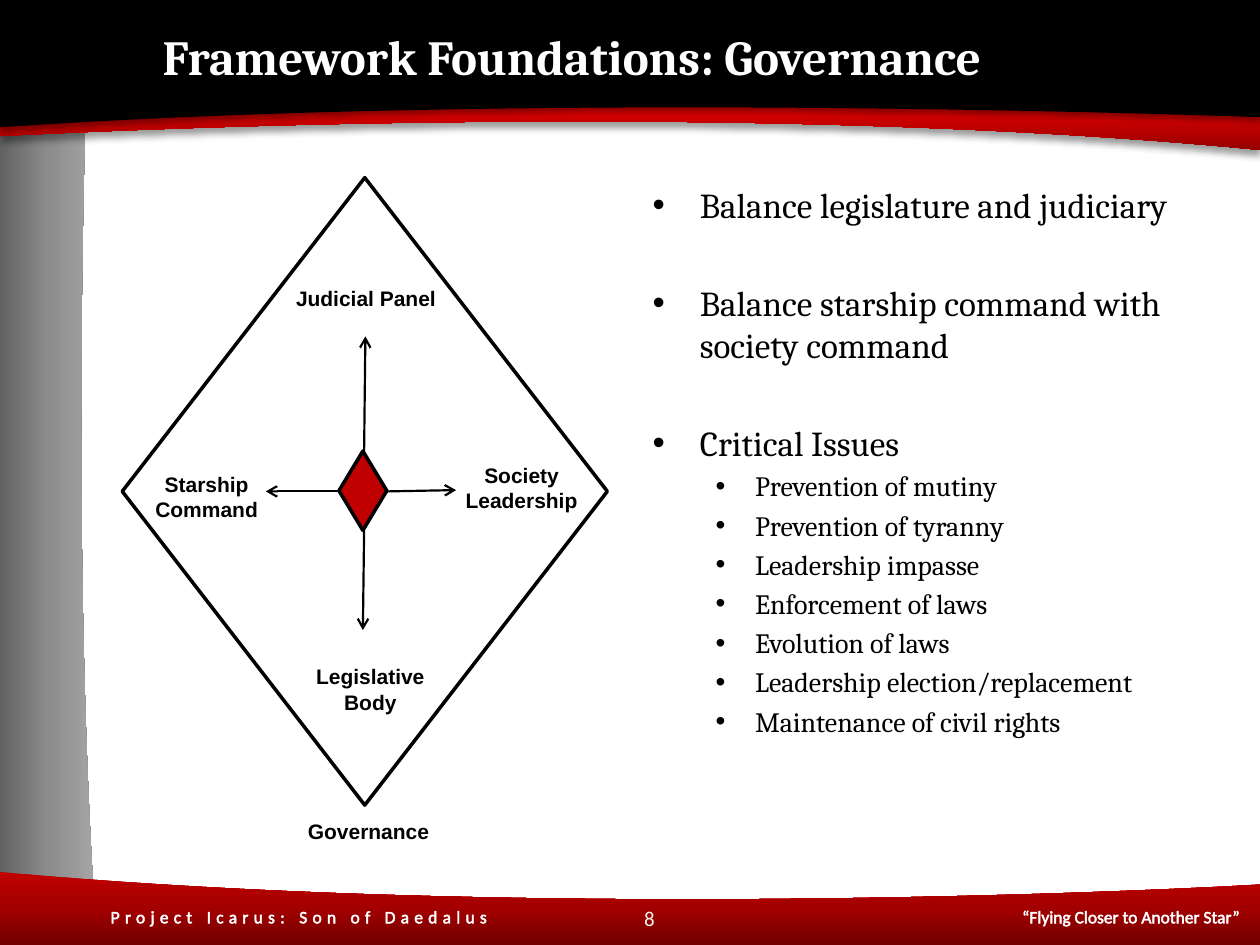
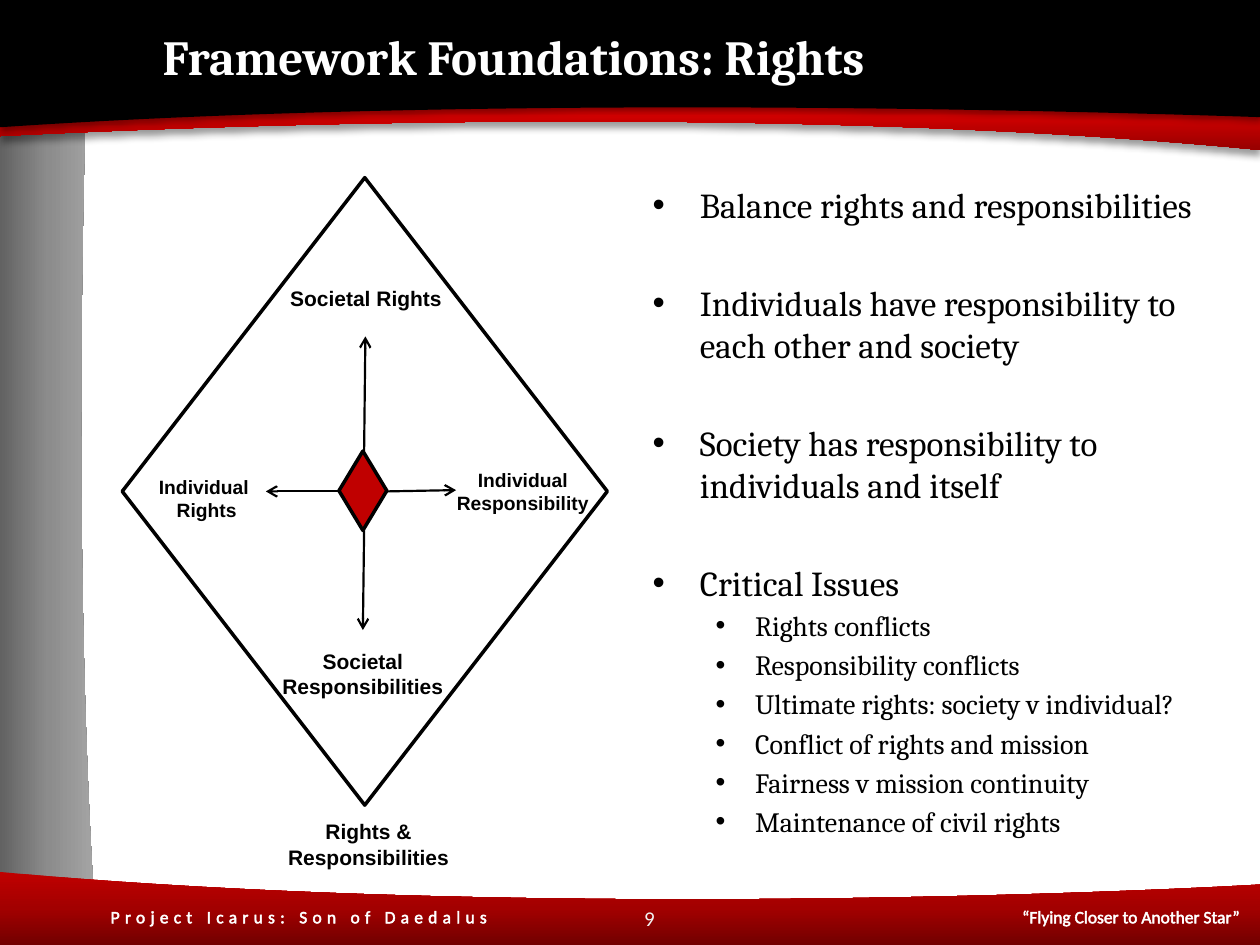
from copy import deepcopy

from lxml.etree import SubElement
from pptx import Presentation
from pptx.dml.color import RGBColor
from pptx.enum.shapes import MSO_CONNECTOR, MSO_SHAPE
from pptx.enum.text import MSO_ANCHOR, MSO_AUTO_SIZE, PP_ALIGN
from pptx.oxml.ns import qn
from pptx.util import Inches, Pt

BLACK, WHITE, PALE, RED = "000000", "FFFFFF", "F2F2F2", "C00000"
TITLE_FONT, LABEL_FONT, FOOTER_FONT = "Cambria", "Arial", "Calibri"

BANDS = [
    {"curve": [(0.71, 0), (0.67, 0.93), (0.56, 4.51), (0.77, 7.5)],
     "corners": [(0, 7.5), (0, 0)],
     "colors": ["626262", "8C8C8C", "A6A6A6"], "angle": 0},
    {"curve": [(0, 1.08), (1.21, 1.02), (6, 0.8), (10, 1.19)],
     "corners": [(10, 0.59), (0, 0.59)],
     "colors": ["FF0000", "D70000", "970000"], "angle": 270,
     "shadow": {"blur": 4, "distance": 3, "alpha": 40}},
    {"curve": [(10, 0.93), (8.77, 0.89), (3.99, 0.74), (0, 1.01)],
     "corners": [(0, 0), (10, 0)],
     "colors": [BLACK],
     "shadow": {"blur": 3.1, "distance": 1.6, "alpha": 38}},
    {"curve": [(10, 7.02), (8.79, 7.09), (4, 7.29), (0, 6.92)],
     "corners": [(0, 7.5), (10, 7.5)],
     "colors": [RED, "A20000", "720000"], "angle": 270},
]

DIAMOND = (0.97, 1.41, 3.85, 4.98)
CORE = (1.72, 2.17, 0.38, 0.63)
ARROWS = [
    (1.92, 2.17, 1.93, 1.26),
    (2.1, 2.49, 2.65, 2.48),
    (1.72, 2.49, 1.14, 2.49),
    (1.92, 2.8, 1.91, 3.59),
]

SLIDES = [
    {
        "title": "Framework Foundations: Governance",
        "number": "8",
        "body_width": 4.42,
        "points": ["Balance legislature and judiciary",
                   "Balance starship command with society command",
                   "Critical Issues"],
        "issues": ["Prevention of mutiny", "Prevention of tyranny", "Leadership impasse",
                   "Enforcement of laws", "Evolution of laws",
                   "Leadership election/replacement", "Maintenance of civil rights"],
        "labels": [("Judicial Panel", 12, (1.06, 0.81, 1.75, 0.3)),
                   ("Legislative Body", 12, (1.34, 3.81, 1.26, 0.5)),
                   ("Starship Command", 12, (-0.09, 2.28, 1.52, 0.5)),
                   ("Society Leadership", 12, (2.44, 2.21, 1.46, 0.5)),
                   ("Governance", 12, (1.08, 5.04, 1.75, 0.3))],
    },
    {
        "title": "Framework Foundations: Rights",
        "number": "9",
        "body_width": 4.78,
        "points": ["Balance rights and responsibilities",
                   "Individuals have responsibility to each other and society",
                   "Society has responsibility to individuals and itself",
                   "Critical Issues"],
        "issues": ["Rights conflicts", "Responsibility conflicts",
                   "Ultimate rights: society v individual?", "Conflict of rights and mission",
                   "Fairness v mission continuity", "Maintenance of civil rights"],
        "labels": [("Societal Rights", 12, (1.06, 0.81, 1.75, 0.3)),
                   ("Societal Responsibilities", 12, (1.13, 3.69, 1.56, 0.5)),
                   ("Individual \nRights", 11, (-0.09, 2.31, 1.52, 0.47)),
                   ("Individual Responsibility", 11, (2.45, 2.26, 1.46, 0.47)),
                   ("Rights & Responsibilities", 12, (1.08, 5.04, 1.75, 0.5))],
    },
]


def color(hex_text):
    """Turn a hex string into a colour."""
    return RGBColor.from_string(hex_text)


def inches(values):
    """Turn a sequence of numbers into lengths."""
    return [Inches(v) for v in values]


def place(sp, box):
    """Move a placeholder to a box given in inches."""
    sp.left, sp.top, sp.width, sp.height = inches(box)


def add_run(p, text, size, font, hex_text, bold=False):
    """Add one formatted run to a paragraph."""
    r = p.add_run()
    r.text = text
    r.font.size, r.font.name, r.font.bold = Pt(size), font, bold
    r.font.color.rgb = color(hex_text)
    return r


def add_box(shapes, box, anchor=MSO_ANCHOR.TOP):
    """Add an empty wrapped text box and return its frame."""
    tf = shapes.add_textbox(*inches(box)).text_frame
    tf.word_wrap, tf.vertical_anchor = True, anchor
    return tf


def add_centred_text(shapes, box, text, size, font, hex_text, bold=False,
                     anchor=MSO_ANCHOR.TOP):
    """Add a centred text box with one paragraph a line."""
    tf = add_box(shapes, box, anchor)
    for i, line in enumerate(text.split("\n")):
        p = tf.add_paragraph() if i else tf.paragraphs[0]
        p.alignment = PP_ALIGN.CENTER
        add_run(p, line, size, font, hex_text, bold)


def bend_first_edge(sp):
    """Turn the first three line segments of an outline into one cubic curve."""
    lines = list(sp.element.iter(qn("a:lnTo")))[:3]
    curve = lines[0].makeelement(qn("a:cubicBezTo"), {})
    lines[0].addprevious(curve)
    for line in lines:
        curve.append(line[0])
        line.getparent().remove(line)


def fill_band(sp, colors, angle):
    """Fill a band with one colour or a three-stop gradient."""
    if len(colors) == 1:
        sp.fill.solid()
        sp.fill.fore_color.rgb = color(colors[0])
        return
    sp.fill.gradient()
    sp.fill.gradient_angle = angle
    gs = sp.element.find(".//" + qn("a:gs"))
    gs.addnext(deepcopy(gs))
    for i, (stop, hex_text) in enumerate(zip(sp.fill.gradient_stops, colors)):
        stop.position = i / 2
        stop.color.rgb = color(hex_text)


def add_shadow(sp, blur, distance, alpha):
    """Give a shape a black shadow that falls downwards."""
    effects = sp.element.spPr.find(qn("a:effectLst"))
    shadow = SubElement(effects, qn("a:outerShdw"), blurRad=str(Pt(blur)), dist=str(Pt(distance)),
                        dir="5400000", algn="t", rotWithShape="0")
    clr = SubElement(shadow, qn("a:srgbClr"), val=BLACK)
    SubElement(clr, qn("a:alpha"), val=str(alpha * 1000))


def add_band(shapes, curve, corners, colors, angle=0, shadow=None):
    """Draw one curved band."""
    start, *rest = [inches(pt) for pt in curve + corners]
    builder = shapes.build_freeform(*start)
    builder.add_line_segments(rest)
    sp = builder.convert_to_shape()
    bend_first_edge(sp)
    sp.shadow.inherit = False
    fill_band(sp, colors, angle)
    sp.line.fill.background()
    if shadow:
        add_shadow(sp, **shadow)


def add_footer(shapes, box):
    """Write the project name and, at a right tab, the motto."""
    p = add_box(shapes, box).paragraphs[0]
    tabs = SubElement(p._p.get_or_add_pPr(), qn("a:tabLst"))
    SubElement(tabs, qn("a:tab"), pos=str(Inches(box[2] - 0.26)), algn="r")
    for text, spacing in (("Project Icarus: Son of Daedalus\t", 300),
                          ("“Flying Closer to Another Star”", 0)):
        r = add_run(p, text, 10, FOOTER_FONT, WHITE)
        rPr = r._r.get_or_add_rPr()
        rPr.set("spc", str(spacing))
        ln = rPr.makeelement(qn("a:ln"), {"w": str(Pt(0.25))})
        rPr.insert(0, ln)
        SubElement(SubElement(ln, qn("a:solidFill")), qn("a:srgbClr"), val=WHITE)


def decorate_layout(layout, s):
    """Draw the shared bands and footer on a slide and move them to its layout."""
    count = len(s.shapes)
    for band in BANDS:
        add_band(s.shapes, **band)
    add_footer(s.shapes, (0.78, 7.14, 9.22, 0.27))
    for sp in list(s.shapes)[count:]:
        layout.shapes.element.append(sp.element)


def add_title(s, text, box):
    """Fill the title placeholder."""
    place(s.shapes.title, box)
    tf = s.shapes.title.text_frame
    tf.auto_size, tf.vertical_anchor = MSO_AUTO_SIZE.NONE, MSO_ANCHOR.MIDDLE
    tf.paragraphs[0].alignment = PP_ALIGN.LEFT
    add_run(tf.paragraphs[0], text, 28, TITLE_FONT, WHITE, True)


def add_bullets(s, points, issues, box):
    """Fill the body placeholder with points and the issues below the last one."""
    sp = s.placeholders[1]
    place(sp, box)
    tf = sp.text_frame
    tf.auto_size, tf.vertical_anchor = MSO_AUTO_SIZE.NONE, MSO_ANCHOR.TOP
    rows = [(t, 0, 20, 31.8, 3 / 8, 3 / 8) for t in points]
    rows += [(t, 1, 16, 3.2, 13 / 16, 5 / 16) for t in issues]
    for i, (text, level, size, before, margin, hang) in enumerate(rows):
        p = tf.add_paragraph() if i else tf.paragraphs[0]
        p.level = level
        p.space_before = Pt(before if i else 0)
        pPr = p._p.get_or_add_pPr()
        pPr.set("marL", str(Inches(margin)))
        pPr.set("indent", str(-Inches(hang)))
        SubElement(pPr, qn("a:buFont"), typeface="Arial")
        SubElement(pPr, qn("a:buChar"), char="•")
        add_run(p, text, size, TITLE_FONT, BLACK)


def add_diamond(shapes, box, fill=None):
    """Add an outlined diamond."""
    sp = shapes.add_shape(MSO_SHAPE.DIAMOND, *inches(box))
    sp.shadow.inherit = False
    if fill:
        sp.fill.solid()
        sp.fill.fore_color.rgb = color(fill)
    else:
        sp.fill.background()
    sp.line.color.rgb, sp.line.width = color(BLACK), Pt(2)


def add_arrow(shapes, start, end):
    """Add a thin arrow."""
    c = shapes.add_connector(MSO_CONNECTOR.STRAIGHT, *inches([*start, *end]))
    c.line.color.rgb, c.line.width = color(BLACK), Pt(1.25)
    SubElement(c.element.spPr.find(qn("a:ln")), qn("a:tailEnd"), type="arrow")
    SubElement(c.element.spPr, qn("a:effectLst"))


def add_balance_diagram(s, labels, box):
    """Draw the diamond of opposing forces with its labels."""
    left, top = box[:2]
    shapes = s.shapes.add_group_shape().shapes
    add_diamond(shapes, box)
    add_diamond(shapes, (left + CORE[0], top + CORE[1], *CORE[2:]), RED)
    for x1, y1, x2, y2 in ARROWS:
        add_arrow(shapes, (left + x1, top + y1), (left + x2, top + y2))
    for text, size, (x, y, w, h) in labels:
        add_centred_text(shapes, (left + x, top + y, w, h), text, size, LABEL_FONT, BLACK, True)


def add_foundation_slide(s, content):
    """Fill one slide: title, bullets, page number and diagram."""
    add_title(s, content["title"], (1.19, 0.13, 8.32, 0.62))
    add_bullets(s, content["points"], content["issues"],
                (5.08, 1.41, content["body_width"], 4.89))
    add_centred_text(s.shapes, (3.99, 7.15, 2.33, 0.27), content["number"], 12, FOOTER_FONT,
                     PALE, anchor=MSO_ANCHOR.MIDDLE)
    add_balance_diagram(s, content["labels"], DIAMOND)


def main():
    """Build and save the presentation."""
    prs = Presentation()
    prs.slide_width, prs.slide_height = Inches(10), Inches(7.5)
    layout = prs.slide_layouts[1]
    for i, content in enumerate(SLIDES):
        s = prs.slides.add_slide(layout)
        if i == 0:
            decorate_layout(layout, s)
        add_foundation_slide(s, content)
    prs.save("out.pptx")


if __name__ == "__main__":
    main()
